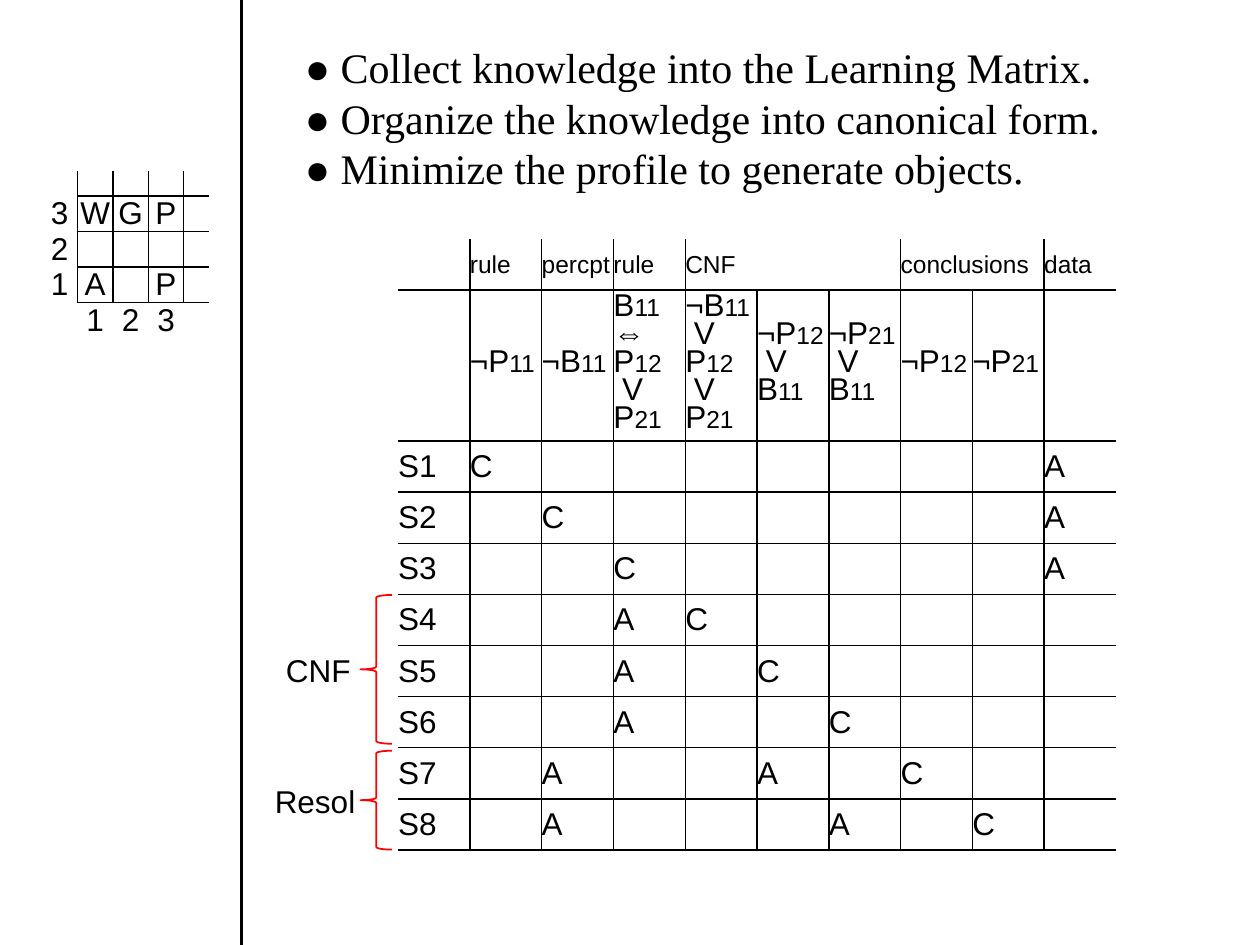
from lxml.etree import SubElement
from pptx import Presentation
from pptx.dml.color import RGBColor
from pptx.enum.shapes import MSO_CONNECTOR, MSO_SHAPE
from pptx.enum.text import MSO_ANCHOR, MSO_AUTO_SIZE, PP_ALIGN
from pptx.oxml.ns import qn
from pptx.util import Pt

COLORS = {"ink": "000000", "brace": "FF0000"}
PLAIN_TABLE_STYLE = "{2D5ABB26-0587-4C30-8999-92F81FD0307C}"

POINTS = [
    "● Collect knowledge into the Learning Matrix.",
    "● Organize the knowledge into canonical form.",
    "● Minimize the profile to generate objects.",
]
CAVE = ["", "3WGP", "2", "1A P", " 123"]
GROUPS = {1: "rule", 2: "percpt", 3: "rule", 4: "CNF", 7: "conclusions", 9: "data"}
CLAUSES = [
    ["¬P11"],
    ["¬B11"],
    ["B11", "⇔", "P12", " V", "P21"],
    ["¬B11", " V", "P12", " V", "P21"],
    ["¬P12", " V", "B11"],
    ["¬P21", " V", "B11"],
    ["¬P12"],
    ["¬P21"],
]
MARKS = [
    "C       A",
    " C      A",
    "  C     A",
    "  AC",
    "  A C",
    "  A  C",
    " A  A C",
    " A   A C",
]


def color(name):
    return RGBColor.from_string(COLORS[name])


def add_run(paragraph, text, size, font="Arial"):
    run = paragraph.add_run()
    run.text = text
    run.font.size = Pt(size)
    run.font.name = font
    run.font.color.rgb = color("ink")


def add_text(slide, box, lines, size, font="Arial"):
    shape = slide.shapes.add_textbox(*map(Pt, box))
    frame = shape.text_frame
    frame.word_wrap = True
    frame.margin_left = frame.margin_right = frame.margin_top = frame.margin_bottom = 0
    for index, line in enumerate(lines):
        paragraph = frame.add_paragraph() if index else frame.paragraphs[0]
        add_run(paragraph, line, size, font)
    return frame


def add_label(slide, box, text):
    frame = add_text(slide, box, [text], 18)
    frame.vertical_anchor = MSO_ANCHOR.MIDDLE
    frame.auto_size = MSO_AUTO_SIZE.SHAPE_TO_FIT_TEXT


def add_brace(slide, top, height):
    shape = slide.shapes.add_shape(MSO_SHAPE.LEFT_BRACE, Pt(206), Pt(top), Pt(18), Pt(height))
    shape.shadow.inherit = False
    shape.fill.background()
    shape.line.color.rgb = color("brace")
    shape.line.width = Pt(1)


def add_divider(slide, left, height):
    line = slide.shapes.add_connector(MSO_CONNECTOR.STRAIGHT, Pt(left), 0, Pt(left), Pt(height))
    line.line.color.rgb = color("ink")
    line.line.width = Pt(2)
    SubElement(line._element.spPr, qn("a:effectLst"))


def add_grid(slide, left, top, widths, heights):
    frame = slide.shapes.add_table(
        len(heights), len(widths), Pt(left), Pt(top), Pt(sum(widths)), Pt(sum(heights))
    )
    table = frame.table
    table.first_row = table.horz_banding = False
    table._tbl.tblPr.find(qn("a:tableStyleId")).text = PLAIN_TABLE_STYLE
    for column, width in zip(table.columns, widths):
        column.width = Pt(width)
    for row, height in zip(table.rows, heights):
        row.height = Pt(height)
    for cell in table.iter_cells():
        cell.margin_left = cell.margin_right = cell.margin_top = cell.margin_bottom = 0
        cell.vertical_anchor = MSO_ANCHOR.MIDDLE
        cell.text_frame.paragraphs[0]._p.get_or_add_endParaRPr().set("sz", "1000")
    return table


def set_borders(cell, sides):
    properties = cell._tc.get_or_add_tcPr()
    for side in "LRTB":
        line = SubElement(properties, qn(f"a:ln{side}"), w=str(Pt(1)))
        if side in sides:
            fill = SubElement(line, qn("a:solidFill"))
            SubElement(fill, qn("a:srgbClr"), val=COLORS["ink"])
        else:
            SubElement(line, qn("a:noFill"))
    cell.fill.background()


def write_cell(cell, text, size=18, align=PP_ALIGN.LEFT):
    if text.strip():
        paragraph = cell.text_frame.paragraphs[0]
        paragraph.alignment = align
        add_run(paragraph, text, size)


def write_clause(cell, lines):
    frame = cell.text_frame
    for index, line in enumerate(lines):
        paragraph = frame.add_paragraph() if index else frame.paragraphs[0]
        paragraph.line_spacing = Pt(16)
        symbol = line.rstrip("0123456789")
        add_run(paragraph, symbol, 18)
        if symbol != line:
            add_run(paragraph, line[len(symbol):], 14)


def add_cave_map(slide):
    table = add_grid(slide, 24, 97.7, [20.25] * 4 + [14.4], [14.4] + [20.25] * 4)
    for row, text in enumerate(CAVE):
        for column in range(5):
            sides = ""
            if row < 4:
                sides += "R" if column < 4 else ""
                sides += "L" if column else ""
            if column:
                sides += "T" if row else ""
                sides += "B" if row < 4 else ""
            cell = table.cell(row, column)
            set_borders(cell, sides)
            write_cell(cell, text[column:column + 1], align=PP_ALIGN.CENTER)


def add_learning_matrix(slide):
    table = add_grid(slide, 227.5, 136.6, [41.04] * 10, [29.2, 86.3] + [29.2] * 8)
    table.cell(0, 4).merge(table.cell(0, 6))
    table.cell(0, 7).merge(table.cell(0, 8))
    for row in range(10):
        for column in range(10):
            cell = table.cell(row, column)
            sides = "B" + ("T" if row else "")
            sides += ("L" if column else "") + ("R" if column < 9 else "")
            set_borders(cell, "" if cell.is_spanned else sides)
    for column, text in GROUPS.items():
        write_cell(table.cell(0, column), text, 14)
    for column, lines in enumerate(CLAUSES, 1):
        write_clause(table.cell(1, column), lines)
    for number, marks in enumerate(MARKS, 1):
        write_cell(table.cell(number + 1, 0), f"S{number}")
        for column, mark in enumerate(marks, 1):
            write_cell(table.cell(number + 1, column), mark)


def main():
    presentation = Presentation()
    presentation.slide_width = Pt(720)
    presentation.slide_height = Pt(540)
    slide = presentation.slides.add_slide(presentation.slide_layouts[6])
    add_learning_matrix(slide)
    add_cave_map(slide)
    add_text(slide, (174.2, 23.8, 498, 84), POINTS, 24, "Times New Roman")
    add_divider(slide, 138, 540)
    add_brace(slide, 340, 85)
    add_brace(slide, 429, 56.5)
    add_label(slide, (163.4, 372, 48, 21.6), "CNF")
    add_label(slide, (157, 447, 60, 21.6), "Resol")
    presentation.save("out.pptx")


if __name__ == "__main__":
    main()
